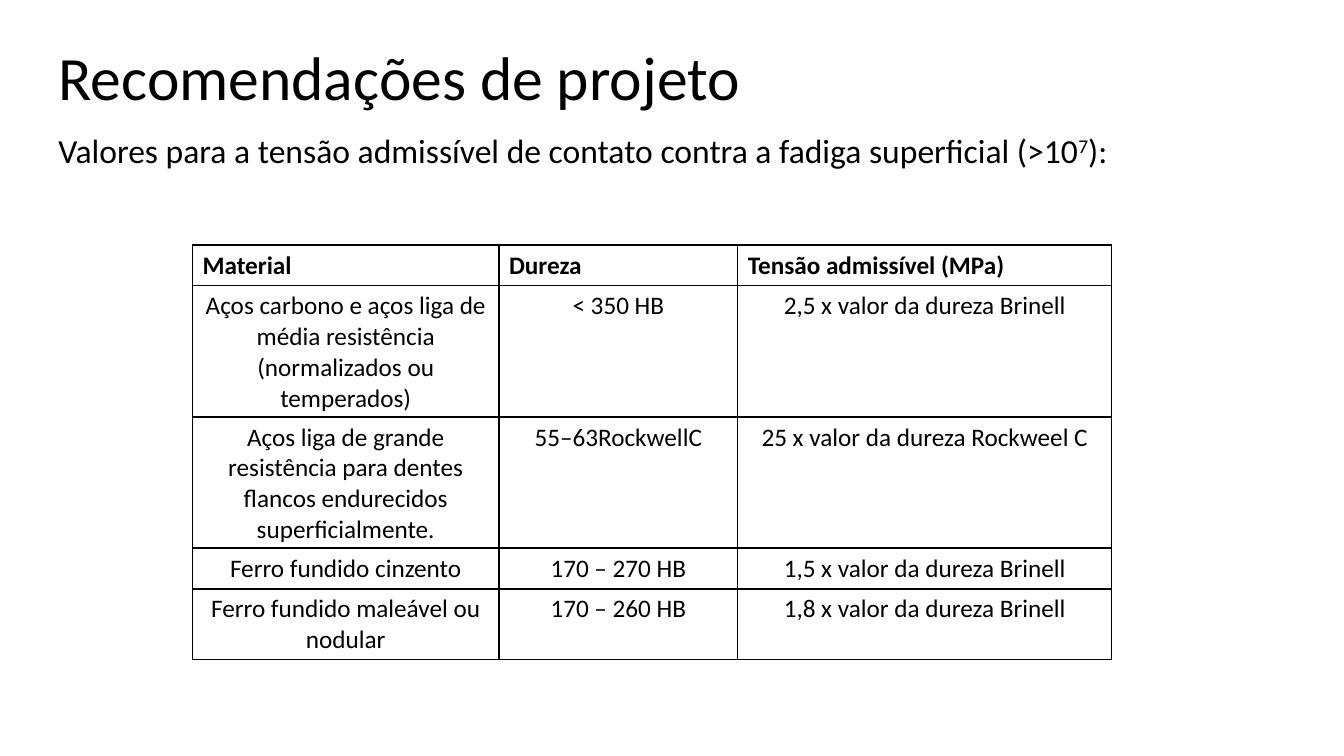
from lxml import etree
from pptx import Presentation
from pptx import util as u
from pptx.dml.color import RGBColor
from pptx.enum import text
from pptx.oxml import ns

COLORS = {"ink": "000000"}
FONT = "Calibri"

COLUMN_WIDTHS = [218.9, 170.6, 267.1]
ROW_HEIGHTS = [29.2, 93.5, 93.5, 29.2, 50]
STRESS_ROWS = [
    ["Material", "Dureza", "Tensão admissível (MPa)"],
    ["Aços carbono e aços liga de média resistência (normalizados ou temperados)",
     "< 350 HB", "2,5 x valor da dureza Brinell"],
    ["Aços liga de grande resistência para dentes flancos endurecidos superficialmente.",
     "55–63RockwellC", "25 x valor da dureza Rockweel C"],
    ["Ferro fundido cinzento", "170 – 270 HB", "1,5 x valor da dureza Brinell"],
    ["Ferro fundido maleável ou nodular", "170 – 260 HB", "1,8 x valor da dureza Brinell"],
]


class SlideBuilder:
    def __init__(self, slide):
        self.slide = slide

    def style(self, run, size, bold=False):
        run.font.name = FONT
        run.font.size = u.Pt(size)
        run.font.bold = bold
        run.font.color.rgb = RGBColor.from_string(COLORS["ink"])

    def title(self, wording, left, top, width, height):
        shape = self.slide.shapes.title
        shape.left, shape.top = u.Pt(left), u.Pt(top)
        shape.width, shape.height = u.Pt(width), u.Pt(height)
        frame = shape.text_frame
        frame.text = wording
        frame.vertical_anchor = text.MSO_ANCHOR.MIDDLE
        paragraph = frame.paragraphs[0]
        paragraph.alignment = text.PP_ALIGN.LEFT
        paragraph.line_spacing = 0.9
        self.style(paragraph.runs[0], 44)

    def sentence(self, pieces, left, top, width, height):
        """Add one line of text from (wording, is_superscript) pieces."""
        shape = self.slide.shapes.add_textbox(u.Pt(left), u.Pt(top), u.Pt(width), u.Pt(height))
        frame = shape.text_frame
        frame.word_wrap = True
        frame.auto_size = text.MSO_AUTO_SIZE.SHAPE_TO_FIT_TEXT
        for wording, is_superscript in pieces:
            run = frame.paragraphs[0].add_run()
            run.text = wording
            self.style(run, 24)
            if is_superscript:
                run._r.get_or_add_rPr().set("baseline", "30000")

    def border(self, cell):
        properties = cell._tc.get_or_add_tcPr()
        for position, side in enumerate(("lnL", "lnR", "lnT", "lnB")):
            line = etree.Element(ns.qn(f"a:{side}"), w=str(u.Pt(1)))
            fill = etree.SubElement(line, ns.qn("a:solidFill"))
            etree.SubElement(fill, ns.qn("a:srgbClr"), val=COLORS["ink"])
            properties.insert(position, line)

    def table(self, rows, widths, heights, left, top):
        frame = self.slide.shapes.add_table(
            len(rows), len(widths), u.Pt(left), u.Pt(top),
            u.Pt(sum(widths)), u.Pt(sum(heights)))
        table = frame.table
        table.first_row = table.horz_banding = False
        for column, width in zip(table.columns, widths):
            column.width = u.Pt(width)
        for row_index, (row, height) in enumerate(zip(rows, heights)):
            table.rows[row_index].height = u.Pt(height)
            is_header = row_index == 0
            for column_index, wording in enumerate(row):
                cell = table.cell(row_index, column_index)
                cell.text = wording
                cell.fill.background()
                self.border(cell)
                paragraph = cell.text_frame.paragraphs[0]
                paragraph.alignment = text.PP_ALIGN.LEFT if is_header else text.PP_ALIGN.CENTER
                self.style(paragraph.runs[0], 18, bold=is_header)


def main():
    presentation = Presentation()
    presentation.slide_width, presentation.slide_height = u.Pt(960), u.Pt(540)
    title_only = presentation.slide_layouts[5]
    builder = SlideBuilder(presentation.slides.add_slide(title_only))

    # Heading and introduction
    builder.title("Recomendações de projeto", 34.6, 26.6, 564.5, 62.6)
    builder.sentence(
        [("Valores para a tensão admissível de contato contra a fadiga superficial (>10", False),
         ("7", True), ("):", False)],
        34.6, 89.3, 846, 36)

    # Allowable stress by material
    builder.table(STRESS_ROWS, COLUMN_WIDTHS, ROW_HEIGHTS, 137.5, 175)

    presentation.save("out.pptx")


if __name__ == "__main__":
    main()
